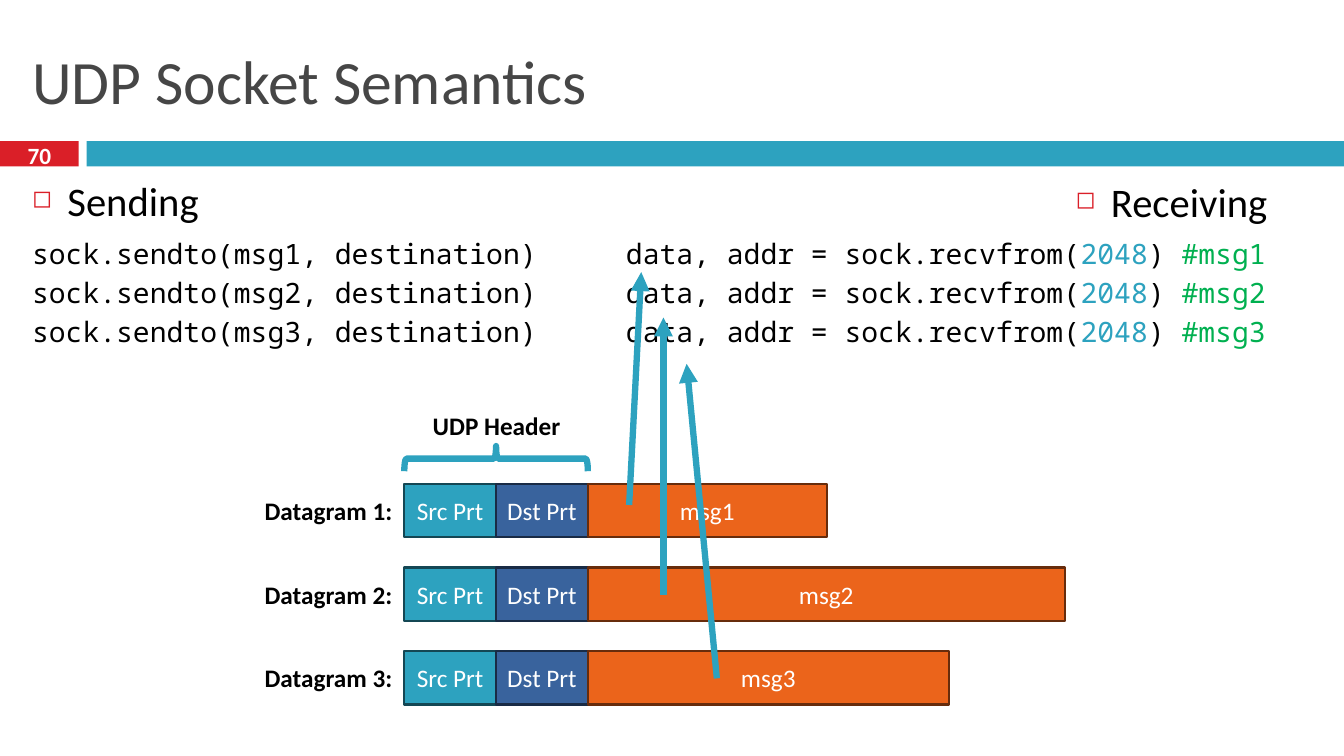
import pptx
import pptx.util
import pptx.dml.color
import pptx.enum.shapes
import pptx.enum.text
import pptx.oxml

SANS, MONO = "Calibri", "Noto Sans Mono"
TEAL, RED, BLUE, RUST = "2DA2BF", "DA1F28", "39639D", "EB641B"
BLACK, WHITE, GRAY, GREEN = "000000", "FFFFFF", "464646", "00B050"

TITLE = "UDP Socket Semantics"
PAGE = "70"
HEADS = [("Sending", 0.22, 1.7, 5.34), ("Receiving", 10.57, 1.71, 2.32)]
SENDS = [[(f"sock.sendto(msg{n}, destination)", BLACK)] for n in (1, 2, 3)]
READS = [
    [("data, addr = sock.recvfrom(", BLACK), ("2048", TEAL),
     (") ", BLACK), (f"#msg{n}", GREEN)]
    for n in (1, 2, 3)
]
CODE = [(SENDS, 0.22, 5.44), (READS, 6.11, 6.69)]
GRAMS = [("Datagram 1:", "msg1", 2.37), ("Datagram 2:", "msg2", 4.73),
         ("Datagram 3:", "msg3", 3.58)]
PORTS = [("Src Prt", TEAL, "144754"), ("Dst Prt", BLUE, "192B45")]
ARROWS = [(6.24, 5.01, 6.36, 2.7), (6.58, 5.9, 6.58, 3.15),
          (7.11, 6.73, 6.81, 3.61)]

WIDE, HIGH = 13.33, 7.5
LEFT, TOP = 4.01, 4.8
COL, ROW, TALL = 0.91, 0.83, 0.53
BAR_TOP, BAR_TALL, TAB, BAR_LEFT = 1.4, 0.25, 0.78, 0.86

inch, pt = pptx.util.Inches, pptx.util.Pt
ALIGN = pptx.enum.text.PP_ALIGN
ANCHOR = pptx.enum.text.MSO_ANCHOR
KIND = pptx.enum.shapes.MSO_SHAPE
NS = 'xmlns:a="http://schemas.openxmlformats.org/drawingml/2006/main"'

deck = pptx.Presentation()
deck.slide_width, deck.slide_height = inch(WIDE), inch(HIGH)
slide = deck.slides.add_slide(deck.slide_layouts[5])


def color(code):
    return pptx.dml.color.RGBColor.from_string(code)


def node(xml):
    return pptx.oxml.parse_xml(xml)


def add_run(par, text, size, code, face=SANS, bold=False):
    run = par.add_run()
    run.text = text
    run.font.size, run.font.name, run.font.bold = pt(size), face, bold
    run.font.color.rgb = color(code)


def add_text(x, y, w, h, anchor=ANCHOR.TOP, wrap=True):
    frame = slide.shapes.add_textbox(inch(x), inch(y), inch(w), inch(h)).text_frame
    frame.word_wrap, frame.vertical_anchor = wrap, anchor
    return frame


def add_shape(kind, x, y, w, h, fill=None, line=None, width=1.5):
    shape = slide.shapes.add_shape(kind, inch(x), inch(y), inch(w), inch(h))
    shape.shadow.inherit = False
    if fill:
        shape.fill.solid()
        shape.fill.fore_color.rgb = color(fill)
    else:
        shape.fill.background()
    if line:
        shape.line.color.rgb = color(line)
        shape.line.width = pt(width)
    else:
        shape.line.fill.background()
    return shape


def add_cell(x, y, w, text, fill, line):
    frame = add_shape(KIND.RECTANGLE, x, y, w, TALL, fill, line).text_frame
    frame.margin_left = frame.margin_right = 0
    frame.vertical_anchor = ANCHOR.MIDDLE
    par = frame.paragraphs[0]
    par.alignment = ALIGN.CENTER
    add_run(par, text, 18, WHITE)


def add_head(text, x, y, w):
    par = add_text(x, y, w, 0.7).paragraphs[0]
    par.space_before = pt(7)
    add_run(par, text, 29, BLACK)
    props = par._p.get_or_add_pPr()
    props.set("marL", str(inch(0.35)))
    props.set("indent", str(-inch(0.35)))
    props.append(node(f'<a:buClr {NS}><a:srgbClr val="{RED}"/></a:buClr>'))
    props.append(node(f'<a:buSzPct {NS} val="60000"/>'))
    props.append(node(f'<a:buChar {NS} char="◻"/>'))


def add_code(lines, x, w):
    frame = add_text(x, 2.33, w, 1.35)
    for i, line in enumerate(lines):
        par = frame.add_paragraph() if i else frame.paragraphs[0]
        par.space_before, par.line_spacing = pt(6.5), 0.9
        for text, code in line:
            add_run(par, text, 20, code, MONO)


def add_arrow(x1, y1, x2, y2):
    kind = pptx.enum.shapes.MSO_CONNECTOR.STRAIGHT
    arrow = slide.shapes.add_connector(kind, inch(x1), inch(y1), inch(x2), inch(y2))
    arrow.line.color.rgb = color(TEAL)
    arrow.line.width = pt(4.5)
    arrow.line._get_or_add_ln().append(node(f'<a:tailEnd {NS} type="triangle"/>'))
    arrow._element.spPr.append(node(f"<a:effectLst {NS}/>"))


def main():
    add_shape(KIND.RECTANGLE, 0, BAR_TOP, TAB, BAR_TALL, RED)
    add_shape(KIND.RECTANGLE, BAR_LEFT, BAR_TOP, WIDE - BAR_LEFT, BAR_TALL, TEAL)

    title = slide.shapes.title
    title.left, title.top = inch(0.22), inch(0.25)
    title.width, title.height = inch(12.89), inch(1.08)
    title.text_frame.vertical_anchor = ANCHOR.MIDDLE
    par = title.text_frame.paragraphs[0]
    par.alignment = ALIGN.LEFT
    add_run(par, TITLE, 44, GRAY)

    par = add_text(0, 1.37, TAB, 0.33, ANCHOR.MIDDLE).paragraphs[0]
    par.alignment = ALIGN.CENTER
    add_run(par, PAGE, 16.6, WHITE, bold=True)

    for head in HEADS:
        add_head(*head)
    for block in CODE:
        add_code(*block)

    for i, (label, text, w) in enumerate(GRAMS):
        y = TOP + i * ROW
        for j, (port, fill, line) in enumerate(PORTS):
            add_cell(LEFT + j * COL, y, COL, port, fill, line)
        add_cell(LEFT + 2 * COL, y, w, text, RUST, "672C0C")
        par = add_text(2.47, y, 1.52, TALL, ANCHOR.MIDDLE, False).paragraphs[0]
        par.alignment = ALIGN.RIGHT
        add_run(par, label, 18, BLACK, bold=True)

    deep, span = 0.25, 2 * COL
    brace = add_shape(KIND.LEFT_BRACE, LEFT + COL - deep / 2, 4.55 - span / 2,
                      deep, span, None, TEAL, 4.5)
    brace.rotation = 90
    par = add_text(4.19, 4.02, 1.47, 0.4, wrap=False).paragraphs[0]
    par.alignment = ALIGN.CENTER
    add_run(par, "UDP Header", 18, BLACK, bold=True)

    for ends in ARROWS:
        add_arrow(*ends)
    deck.save("out.pptx")


if __name__ == "__main__":
    main()
